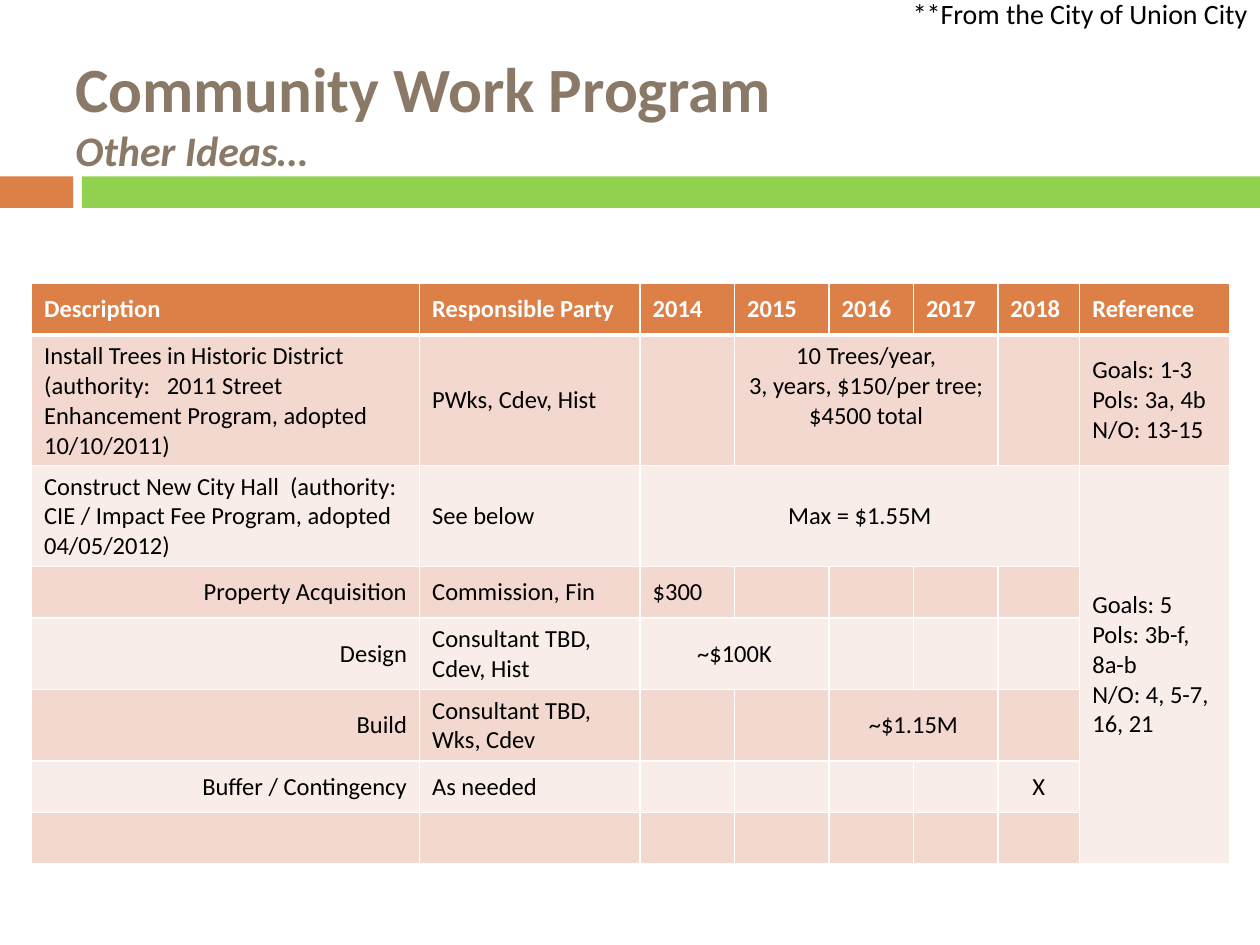
from dataclasses import dataclass

from lxml.etree import SubElement
from pptx import Presentation
from pptx.dml.color import RGBColor
from pptx.enum.shapes import MSO_SHAPE
from pptx.enum.text import MSO_ANCHOR, PP_ALIGN
from pptx.oxml.ns import qn
from pptx.util import Inches, Pt

FONT = "Calibri"
COLORS = {
    "orange": "DD8047",
    "green": "92D050",
    "title": "8A7967",
    "band_dark": "F2D8CF",
    "band_light": "F9EDE9",
    "white": "FFFFFF",
    "black": "000000",
}
LEFT, CENTER, RIGHT = PP_ALIGN.LEFT, PP_ALIGN.CENTER, PP_ALIGN.RIGHT


@dataclass
class Bar:
    left: float
    width: float
    color: str


@dataclass
class Entry:
    row: int
    column: int
    text: str
    align: PP_ALIGN = LEFT
    rows: int = 1
    columns: int = 1
    bottom_margin: float = 0.05


BARS = [Bar(0, 0.58, "orange"), Bar(0.65, 9.35, "green")]
COLUMN_WIDTHS = [3.08, 1.75, 0.75, 0.75, 0.67, 0.67, 0.65, 1.19]
ROW_COUNT, ROW_HEIGHT = 8, 0.41
HEADINGS = ["Description", "Responsible Party", "2014", "2015", "2016", "2017",
            "2018", "Reference"]
ENTRIES = [Entry(0, column, heading) for column, heading in enumerate(HEADINGS)] + [
    Entry(1, 0, "Install Trees in Historic District (authority:   2011 Street "
                "Enhancement Program, adopted 10/10/2011)"),
    Entry(1, 1, "PWks, Cdev, Hist"),
    Entry(1, 3, "10 Trees/year,\n3, years, $150/per tree; $4500 total", CENTER,
          columns=3, bottom_margin=0.28),
    Entry(1, 7, "Goals: 1-3\nPols: 3a, 4b\nN/O: 13-15"),
    Entry(2, 0, "Construct New City Hall  (authority: CIE / Impact Fee Program, "
                "adopted 04/05/2012)"),
    Entry(2, 1, "See below"),
    Entry(2, 2, "Max = $1.55M", CENTER, columns=5),
    Entry(2, 7, "Goals: 5\nPols: 3b-f, 8a-b\nN/O: 4, 5-7, 16, 21", rows=6),
    Entry(3, 0, "Property Acquisition", RIGHT),
    Entry(3, 1, "Commission, Fin"),
    Entry(3, 2, "$300"),
    Entry(4, 0, "Design", RIGHT),
    Entry(4, 1, "Consultant TBD, Cdev, Hist"),
    Entry(4, 2, "~$100K", CENTER, columns=2),
    Entry(5, 0, "Build", RIGHT),
    Entry(5, 1, "Consultant TBD, Wks, Cdev"),
    Entry(5, 4, "~$1.15M", CENTER, columns=2),
    Entry(6, 0, "Buffer / Contingency", RIGHT),
    Entry(6, 1, "As needed"),
    Entry(6, 6, "X", CENTER),
]


def rgb(name: str) -> RGBColor:
    return RGBColor.from_string(COLORS[name])


def format_font(font, size: float, color: str, bold: bool = False) -> None:
    font.name = FONT
    font.size = Pt(size)
    font.bold = bold
    font.color.rgb = rgb(color)


def add_bar(page, bar: Bar) -> None:
    shape = page.shapes.add_shape(MSO_SHAPE.RECTANGLE, Inches(bar.left), Inches(1.4),
                                  Inches(bar.width), Inches(0.25))
    shape.shadow.inherit = False
    shape.fill.solid()
    shape.fill.fore_color.rgb = rgb(bar.color)
    shape.line.fill.background()


def add_title(page) -> None:
    box = page.shapes.add_textbox(Inches(0.5), Inches(0.08), Inches(9), Inches(1.62))
    frame = box.text_frame
    frame.word_wrap = True
    frame.vertical_anchor = MSO_ANCHOR.MIDDLE
    paragraph = frame.paragraphs[0]
    paragraph.text = "Community Work Program\vOther Ideas…"
    heading, subheading = paragraph.runs
    format_font(heading.font, 36, "title", bold=True)
    format_font(subheading.font, 24, "title", bold=True)
    subheading.font.italic = True


def add_source_note(page) -> None:
    box = page.shapes.add_textbox(Inches(3.33), Inches(-0.08), Inches(6.67), Inches(0.37))
    box.text_frame.word_wrap = True
    box.text_frame.text = "**From the City of Union City"
    paragraph = box.text_frame.paragraphs[0]
    paragraph.alignment = RIGHT
    format_font(paragraph.runs[0].font, 16, "black")


def set_borders(cell, top: float, bottom: float) -> None:
    """Give the cell white borders; widths are in points, sides are 1 pt."""
    properties = cell._tc.get_or_add_tcPr()
    for tag, width in (("a:lnL", 1), ("a:lnR", 1), ("a:lnT", top), ("a:lnB", bottom)):
        line = SubElement(properties, qn(tag), w=str(Pt(width)))
        fill = SubElement(line, qn("a:solidFill"))
        SubElement(fill, qn("a:srgbClr"), val=COLORS["white"])


def fill_entry(table, entry: Entry) -> None:
    cell = table.cell(entry.row, entry.column)
    if entry.rows > 1 or entry.columns > 1:
        cell.merge(table.cell(entry.row + entry.rows - 1,
                              entry.column + entry.columns - 1))
    cell.text_frame.text = entry.text
    cell.vertical_anchor = MSO_ANCHOR.MIDDLE
    cell.margin_bottom = Inches(entry.bottom_margin)
    is_heading = entry.row == 0
    for paragraph in cell.text_frame.paragraphs:
        paragraph.alignment = entry.align
        for span in paragraph.runs:
            format_font(span.font, 14, "white" if is_heading else "black", is_heading)


def add_work_table(page) -> None:
    frame = page.shapes.add_table(ROW_COUNT, len(COLUMN_WIDTHS), Inches(0.25),
                                  Inches(2.25), Inches(sum(COLUMN_WIDTHS)),
                                  Inches(ROW_COUNT * ROW_HEIGHT))
    table = frame.table
    table.first_row = table.horz_banding = False
    for column, width in zip(table.columns, COLUMN_WIDTHS):
        column.width = Inches(width)
    for index, row in enumerate(table.rows):
        row.height = Inches(ROW_HEIGHT)
        band = "band_dark" if index % 2 else "band_light"
        for cell in row.cells:
            set_borders(cell, top=3 if index == 1 else 1, bottom=3 if index == 0 else 1)
            cell.fill.solid()
            cell.fill.fore_color.rgb = rgb(band if index else "orange")
    for entry in ENTRIES:
        fill_entry(table, entry)


def main() -> None:
    deck = Presentation()
    deck.slide_width, deck.slide_height = Inches(10), Inches(7.5)
    page = deck.slides.add_slide(deck.slide_layouts[6])
    for bar in BARS:
        add_bar(page, bar)
    add_title(page)
    add_source_note(page)
    add_work_table(page)
    deck.save("out.pptx")


if __name__ == "__main__":
    main()
